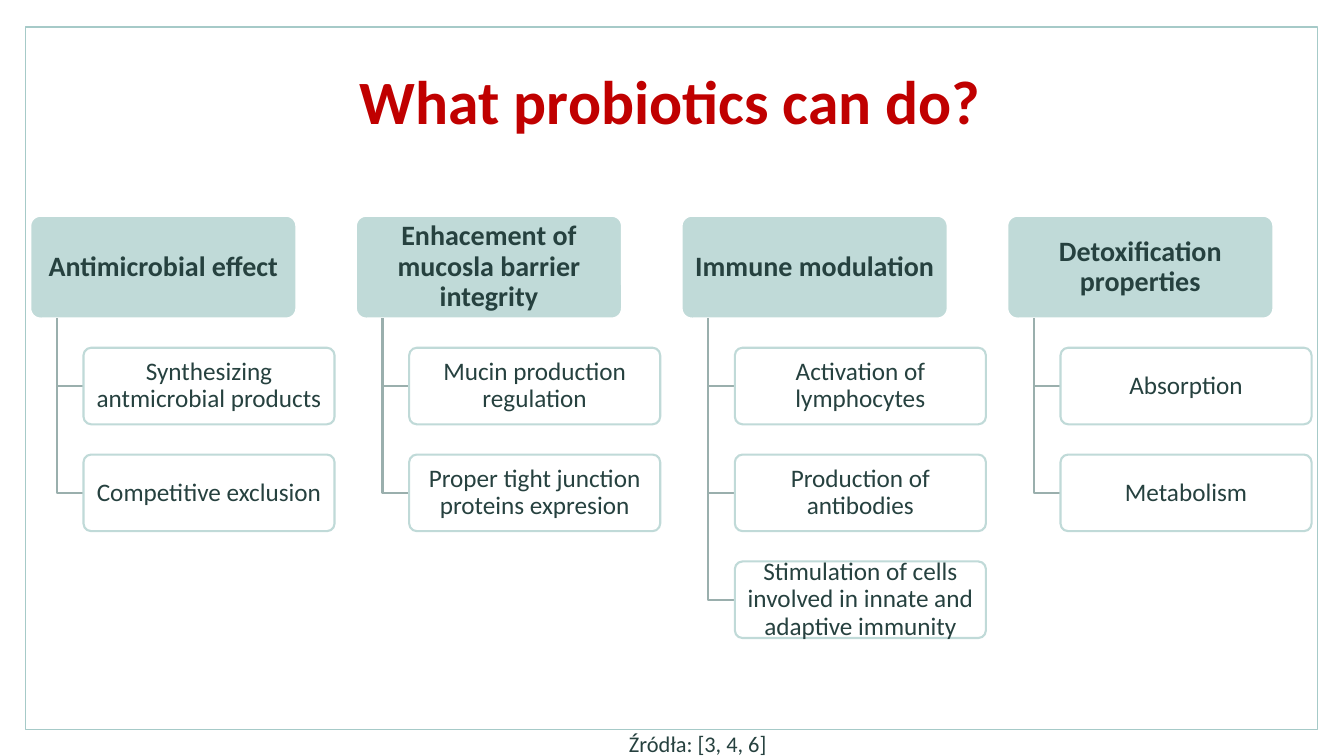
from pptx import Presentation
from pptx.dml.color import RGBColor
from pptx.enum.shapes import MSO_SHAPE
from pptx.enum.text import MSO_ANCHOR, PP_ALIGN
from pptx.util import Inches, Pt

TITLE = "What probiotics can do?"
SOURCES = "Źródła: [3, 4, 6]"
EFFECTS = [
    ("Antimicrobial effect",
     ["Synthesizing antmicrobial products", "Competitive exclusion"]),
    ("Enhacement of mucosla barrier integrity",
     ["Mucin production regulation", "Proper tight junction proteins expresion"]),
    ("Immune modulation",
     ["Activation of lymphocytes", "Production of antibodies",
      "Stimulation of cells involved in innate and adaptive immunity"]),
    ("Detoxification properties", ["Absorption", "Metabolism"]),
]

WHITE, FRAME, MINT, BRANCH = "FFFFFF", "A6CAC8", "C0DAD8", "9AAFAD"
DARK, RED = "26413F", "C00000"
LEFT, TOP, COLUMN_STEP = 0.3, 2.14, 3.23
HEAD_WIDTH, HEAD_HEIGHT = 2.64, 1.02
ITEM_WIDTH, ITEM_HEIGHT = 2.49, 0.76
ITEM_TOP, ROW_STEP = 3.45, 1.06
INDENT = HEAD_WIDTH / 10

presentation = Presentation()
presentation.slide_width, presentation.slide_height = Inches(13.33), Inches(7.5)
slide = presentation.slides.add_slide(presentation.slide_layouts[6])


def color(value):
    return RGBColor.from_string(value)


def style(shape, fill, line, width):
    shape.shadow.inherit = False
    if fill:
        shape.fill.solid()
        shape.fill.fore_color.rgb = color(fill)
    else:
        shape.fill.background()
    shape.line.color.rgb = color(line)
    shape.line.width = Pt(width)


def write(shape, text, size, ink, bold=False, align=PP_ALIGN.CENTER, spacing=0.9):
    frame = shape.text_frame
    frame.word_wrap = True
    frame.vertical_anchor = MSO_ANCHOR.MIDDLE
    paragraph = frame.paragraphs[0]
    paragraph.text = text
    paragraph.alignment = align
    paragraph.line_spacing = spacing
    font = paragraph.font
    font.name, font.size, font.bold = "Calibri", Pt(size), bold
    font.color.rgb = color(ink)


def add_box(kind, left, top, width, height, fill, line, line_width):
    shape = slide.shapes.add_shape(kind, *map(Inches, (left, top, width, height)))
    style(shape, fill, line, line_width)
    return shape


def add_card(left, top, width, height, fill, line, text, size, bold):
    card = add_box(MSO_SHAPE.ROUNDED_RECTANGLE, left, top, width, height, fill, line, 1.5)
    card.adjustments[0] = 0.1
    frame = card.text_frame
    frame.margin_left = frame.margin_right = Inches(0.04)
    frame.margin_top = frame.margin_bottom = Inches(0.03)
    write(card, text, size, DARK, bold)


def add_branch(left, top, bottom):
    x, y, end_x, end_y = map(Inches, (left, top, left + INDENT, bottom))
    builder = slide.shapes.build_freeform(x, y)
    builder.add_line_segments([(x, end_y), (end_x, end_y)], close=False)
    style(builder.convert_to_shape(), None, BRANCH, 1.5)


add_box(MSO_SHAPE.RECTANGLE, 0.25, 0.27, 12.82, 6.97, WHITE, FRAME, 1)
title = slide.shapes.add_textbox(*map(Inches, (1.25, 0.3, 10.8, 1.48)))
write(title, TITLE, 44, RED, bold=True)

for column, (heading, items) in enumerate(EFFECTS):
    left = LEFT + column * COLUMN_STEP
    add_card(left, TOP, HEAD_WIDTH, HEAD_HEIGHT, MINT, WHITE, heading, 20, True)
    for row, item in enumerate(items):
        top = ITEM_TOP + row * ROW_STEP
        add_branch(left + INDENT, TOP + HEAD_HEIGHT, top + ITEM_HEIGHT / 2)
        add_card(left + 2 * INDENT, top, ITEM_WIDTH, ITEM_HEIGHT,
                 WHITE, MINT, item, 18, False)

sources = slide.shapes.add_textbox(*map(Inches, (6.14, 7.19, 1.6, 0.37)))
write(sources, SOURCES, 16, DARK, align=PP_ALIGN.LEFT, spacing=1.0)
sources.text_frame.word_wrap = False
sources.text_frame.vertical_anchor = MSO_ANCHOR.TOP

presentation.save("out.pptx")
